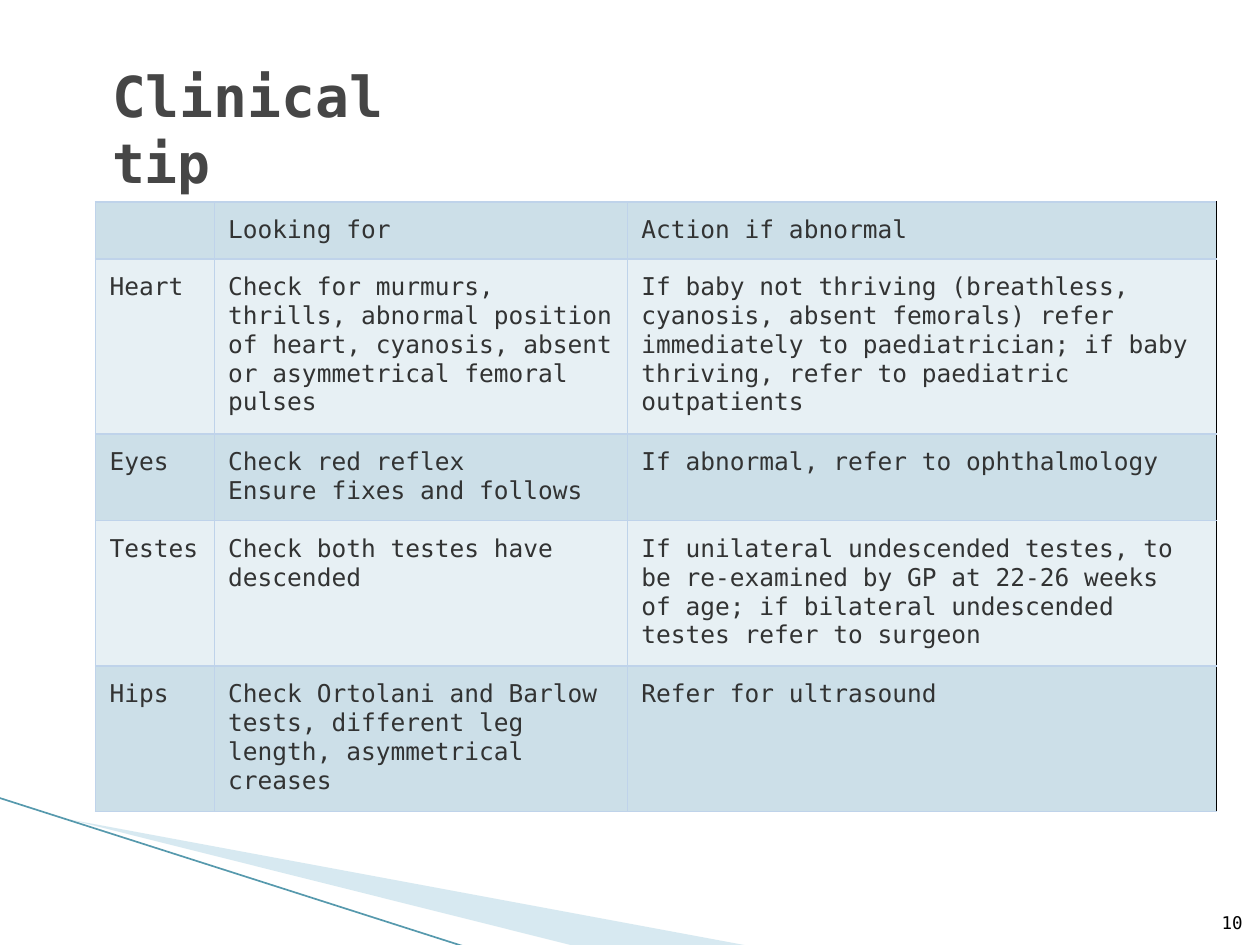
from lxml import etree
from pptx import Presentation
from pptx.dml.color import RGBColor
from pptx.enum.shapes import MSO_CONNECTOR
from pptx.enum.text import MSO_ANCHOR, PP_ALIGN
from pptx.oxml import parse_xml
from pptx.oxml.ns import nsdecls, qn
from pptx.util import Cm, Pt

STRAIGHT = MSO_CONNECTOR.STRAIGHT
MIDDLE, BOTTOM = MSO_ANCHOR.MIDDLE, MSO_ANCHOR.BOTTOM
LEFT, RIGHT = PP_ALIGN.LEFT, PP_ALIGN.RIGHT
FONT = "DejaVu Sans Mono"
COLORS = {
    "title": "464646", "text": "323333", "number": "000000",
    "dark_row": "CCDFE8", "light_row": "E7F0F4",
    "border": "BFD3EA", "right_border": "000000",
    "wedge": "9DCADC", "line": "5699AD",
}


def set_font(font, size, color, bold=False):
    font.name = FONT
    font.size = Pt(size)
    font.bold = bold
    font.color.rgb = RGBColor.from_string(COLORS[color])


def add_border(cell, side, color, width):
    cell._tc.get_or_add_tcPr().append(parse_xml(
        f'<a:ln{side} {nsdecls("a")} w="{Pt(width)}"><a:solidFill>'
        f'<a:srgbClr val="{COLORS[color]}"/></a:solidFill></a:ln{side}>'))


presentation = Presentation()
presentation.slide_width = Cm(25.4)
presentation.slide_height = Cm(19.05)
slide = presentation.slides.add_slide(presentation.slide_layouts[5])

builder = slide.shapes.build_freeform(Cm(1.4), Cm(16.52), scale=1.0)
builder.add_line_segments(
    [(Cm(15.11), Cm(19.07)), (Cm(11.58), Cm(19.07))], close=True)
wedge = builder.convert_to_shape()
wedge.shadow.inherit = False
wedge.fill.solid()
wedge.fill.fore_color.rgb = RGBColor.from_string(COLORS["wedge"])
wedge_color = wedge.fill._xPr.find(qn("a:solidFill"))[0]
etree.SubElement(wedge_color, qn("a:alpha"), val="40000")
wedge.line.fill.background()

line = slide.shapes.add_connector(
    STRAIGHT, Cm(-0.03), Cm(16.08), Cm(9.42), Cm(19.1))
line.line.color.rgb = RGBColor.from_string(COLORS["line"])
line.line.width = Pt(0.95)
etree.SubElement(line._element.spPr, qn("a:effectLst"))

number = slide.shapes.add_textbox(Cm(24.03), Cm(18.11), Cm(1.02), Cm(0.69))
frame = number.text_frame
frame.word_wrap = True
frame.vertical_anchor = BOTTOM
frame.margin_left = frame.margin_right = frame.margin_top = frame.margin_bottom = 0
frame.text = "10"
frame.paragraphs[0].alignment = RIGHT
set_font(frame.paragraphs[0].font, 10, "number")

rows = [
    ("", "Looking for", "Action if abnormal"),
    ("Heart",
     "Check for murmurs, thrills, abnormal position of heart, cyanosis, "
     "absent or asymmetrical femoral pulses",
     "If baby not thriving (breathless, cyanosis, absent femorals) refer "
     "immediately to paediatrician; if baby thriving, refer to paediatric "
     "outpatients"),
    ("Eyes", "Check red reflex\nEnsure fixes and follows",
     "If abnormal, refer to ophthalmology"),
    ("Testes", "Check both testes have descended",
     "If unilateral undescended testes, to be re-examined by GP at 22-26 "
     "weeks of age; if bilateral undescended testes refer to surgeon"),
    ("Hips",
     "Check Ortolani and Barlow tests, different leg length, asymmetrical "
     "creases",
     "Refer for ultrasound"),
]
column_widths = [2.39, 8.33, 11.87]
table = slide.shapes.add_table(
    len(rows), len(column_widths),
    Cm(1.93), Cm(4.07), Cm(sum(column_widths)), Cm(1.02 * len(rows))).table
for column, width in zip(table.columns, column_widths):
    column.width = Cm(width)

for row_index, texts in enumerate(rows):
    table.rows[row_index].height = Cm(1.02)
    for column_index, text in enumerate(texts):
        cell = table.cell(row_index, column_index)
        cell.text = text
        cell.margin_left = cell.margin_right = Cm(0.28)
        cell.margin_top = cell.margin_bottom = Cm(0.28)
        for paragraph in cell.text_frame.paragraphs:
            set_font(paragraph.font, 14, "text")
        for side in "LRTB":
            if side == "R" and column_index == len(column_widths) - 1:
                add_border(cell, side, "right_border", 0.25)
            else:
                add_border(cell, side, "border", 1)
        cell.fill.solid()
        cell.fill.fore_color.rgb = RGBColor.from_string(
            COLORS["light_row" if row_index % 2 else "dark_row"])

title = slide.shapes.title
title.left, title.top, title.width, title.height = Cm(2.13), Cm(1.07), Cm(6.81), Cm(3)
frame = title.text_frame
frame.word_wrap = True
frame.vertical_anchor = MIDDLE
frame.margin_left = frame.margin_right = Cm(0.13)
frame.margin_top = frame.margin_bottom = Cm(0.13)
paragraph = frame.paragraphs[0]
paragraph.alignment = LEFT
for text, size in [("Clinical", 32.2), (" tip", 31.2)]:
    run = paragraph.add_run()
    run.text = text
    set_font(run.font, size, "title", bold=True)

presentation.save("out.pptx")
